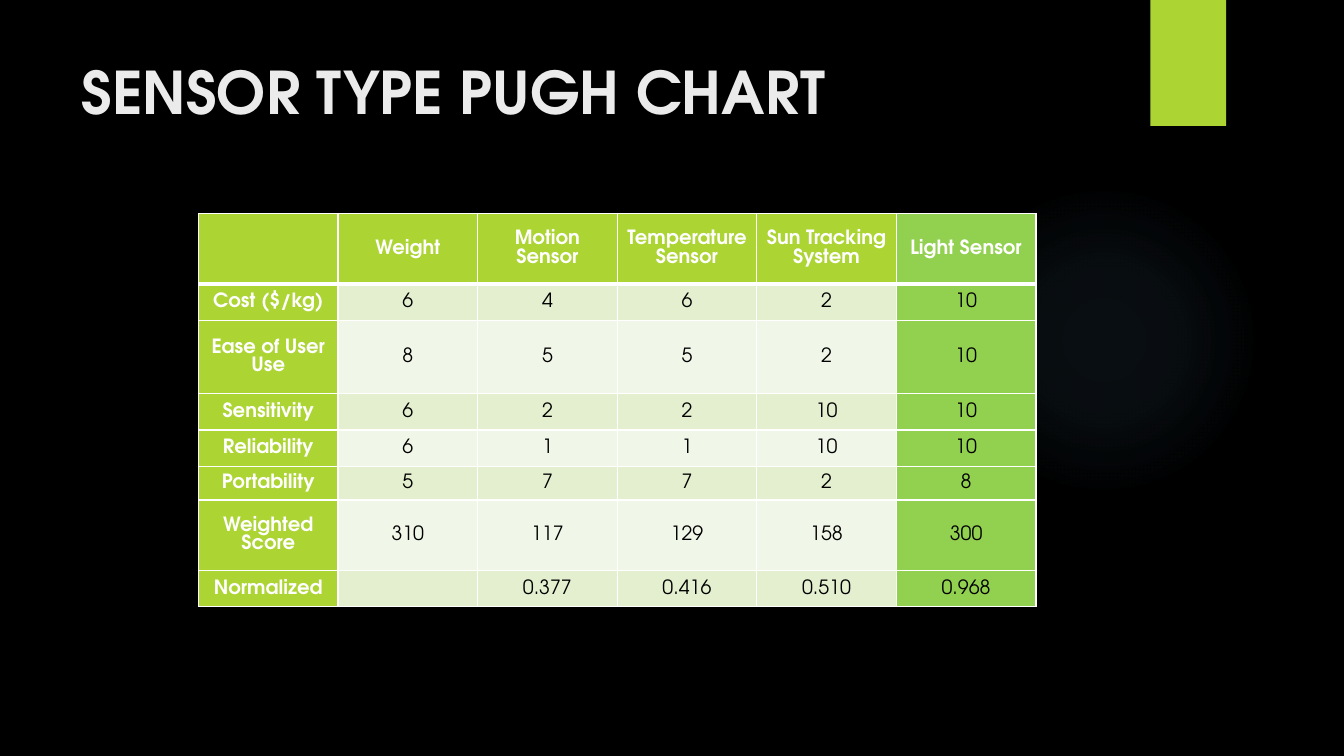
from lxml import etree
from pptx import Presentation
from pptx import util as u
from pptx.dml.color import RGBColor
from pptx.enum import shapes, text
from pptx.oxml import ns, parse_xml

FONT = "TeX Gyre Adventor"
LIME, GREEN, WHITE = "ACD433", "92D050", "FFFFFF"


def colour(value):
    return RGBColor.from_string(value)


def add_run(paragraph, words, size, value, bold):
    run = paragraph.add_run()
    run.text = words
    run.font.name = FONT
    run.font.size = u.Pt(size)
    run.font.bold = bold
    run.font.color.rgb = colour(value)


presentation = Presentation()
presentation.slide_width = u.Pt(960)
presentation.slide_height = u.Pt(540)
slide = presentation.slides.add_slide(presentation.slide_layouts[5])
slide.background.fill.solid()
slide.background.fill.fore_color.rgb = colour("000000")

glow = slide.shapes.add_shape(
    shapes.MSO_SHAPE.OVAL, u.Pt(677.5), u.Pt(131.8), u.Pt(221.8), u.Pt(221.8)
)
glow.shadow.inherit = False
glow.line.fill.background()
stops = "".join(
    f'<a:gs pos="{position}000"><a:srgbClr val="7AC4F0">'
    f'<a:alpha val="{alpha}000"/></a:srgbClr></a:gs>'
    for position, alpha in ((0, 7), (36, 6), (69, 0))
)
gradient = parse_xml(
    f'<a:gradFill {ns.nsdecls("a")}><a:gsLst>{stops}</a:gsLst><a:path path="circle">'
    '<a:fillToRect l="50000" t="50000" r="50000" b="50000"/></a:path></a:gradFill>'
)
glow.element.spPr.find(ns.qn("a:prstGeom")).addnext(gradient)

tab = slide.shapes.add_shape(
    shapes.MSO_SHAPE.RECTANGLE, u.Pt(821.8), u.Pt(0), u.Pt(54), u.Pt(90)
)
tab.shadow.inherit = False
tab.fill.solid()
tab.fill.fore_color.rgb = colour(LIME)
tab.line.fill.background()
tab.element.spPr.find(ns.qn("a:effectLst")).append(parse_xml(
    f'<a:outerShdw {ns.nsdecls("a")} blurRad="{u.Pt(3)}" dist="{u.Pt(2)}" dir="5400000" '
    'rotWithShape="0"><a:srgbClr val="000000"><a:alpha val="45000"/></a:srgbClr></a:outerShdw>'
))

title = slide.shapes.title
title.left, title.top, title.width, title.height = (
    u.Pt(length) for length in (51, 36, 741, 110)
)
title.text_frame.word_wrap = True
title.text_frame.auto_size = text.MSO_AUTO_SIZE.NONE
title.text_frame.vertical_anchor = text.MSO_ANCHOR.TOP
title_paragraph = title.text_frame.paragraphs[0]
title_paragraph.alignment = text.PP_ALIGN.LEFT
add_run(title_paragraph, "SENSOR TYPE PUGH CHART", 42, "EBEBEB", True)

rows = [
    ("", "Weight", "Motion Sensor", "Temperature Sensor", "Sun Tracking System", "Light Sensor"),
    ("Cost ($/kg)", "6", "4", "6", "2", "10"),
    ("Ease of User Use", "8", "5", "5", "2", "10"),
    ("Sensitivity", "6", "2", "2", "10", "10"),
    ("Reliability", "6", "1", "1", "10", "10"),
    ("Portability", "5", "7", "7", "2", "8"),
    ("Weighted Score", "310", "117", "129", "158", "300"),
    ("Normalized", "", "0.377", "0.416", "0.510", "0.968"),
]
heights = (50.4, 26, 52.4, 26, 26, 24, 50.4, 25.8)
table = slide.shapes.add_table(
    len(rows), len(rows[0]), u.Pt(141.8), u.Pt(152.4), u.Pt(598.2), u.Pt(281)
).table
for column in table.columns:
    column.width = u.Pt(99.7)

for row_index, (height, row) in enumerate(zip(heights, rows)):
    table.rows[row_index].height = u.Pt(height)
    for column_index, words in enumerate(row):
        cell = table.cell(row_index, column_index)
        heading = row_index == 0 or column_index == 0
        if column_index == 5:
            fill = GREEN
        elif heading:
            fill = LIME
        else:
            fill = "E3EFCE" if row_index % 2 else "F1F7E8"
        cell.margin_left = cell.margin_right = u.Pt(5)
        cell.margin_top = cell.margin_bottom = u.Pt(0)
        cell.vertical_anchor = text.MSO_ANCHOR.MIDDLE
        properties = cell._tc.get_or_add_tcPr()
        for side in "LRTB":
            thick = (row_index, side) in ((0, "B"), (1, "T"))
            border = etree.SubElement(
                properties, ns.qn(f"a:ln{side}"), w=str(u.Pt(3 if thick else 1))
            )
            solid = etree.SubElement(border, ns.qn("a:solidFill"))
            etree.SubElement(solid, ns.qn("a:srgbClr"), val=WHITE)
        cell.fill.solid()
        cell.fill.fore_color.rgb = colour(fill)
        paragraph = cell.text_frame.paragraphs[0]
        paragraph.alignment = text.PP_ALIGN.CENTER
        paragraph.line_spacing = u.Pt(13)
        if words:
            add_run(paragraph, words, 14, WHITE if heading else "000000", heading)

presentation.save("out.pptx")
